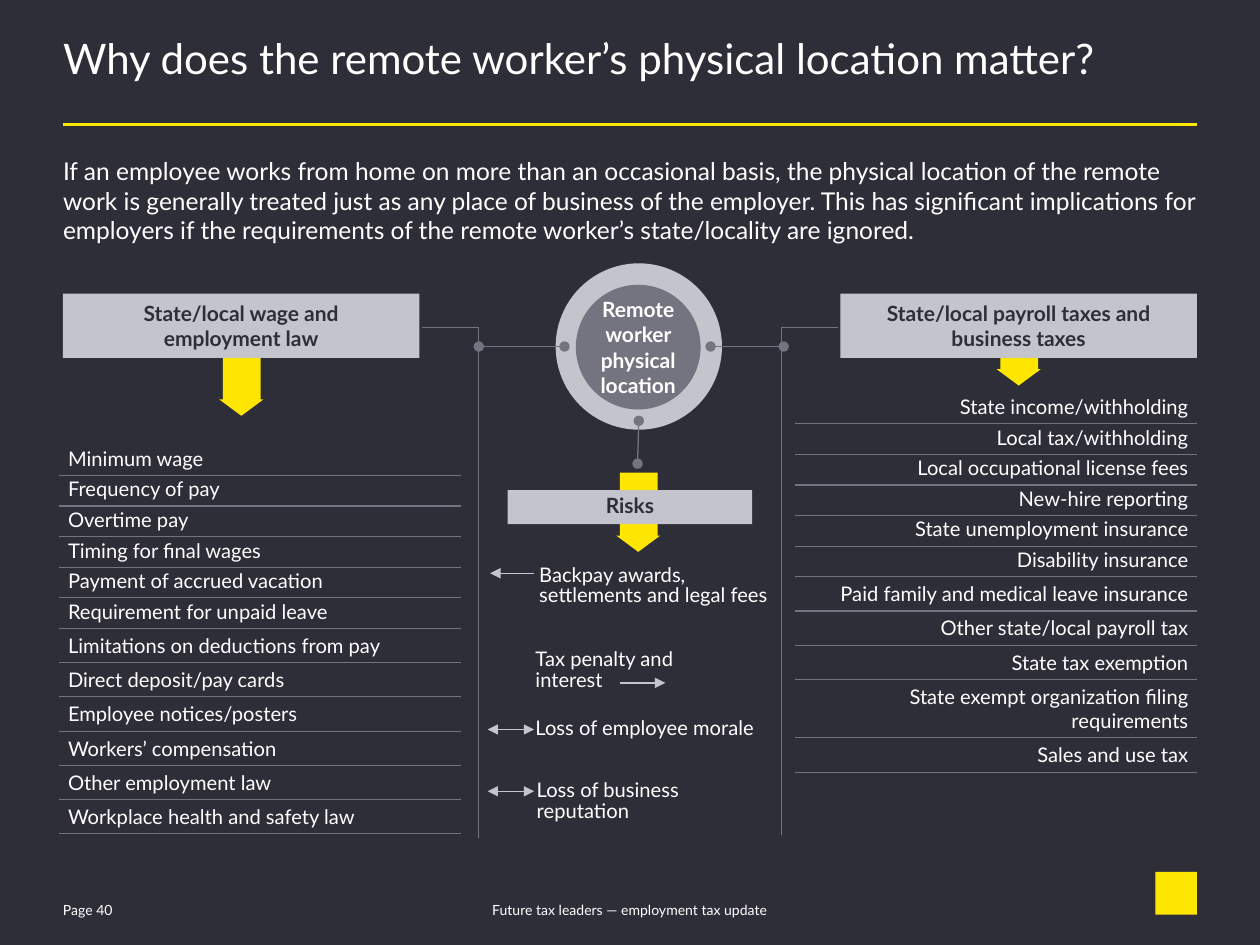
from lxml import etree
from pptx import Presentation
from pptx.dml.color import RGBColor
from pptx.enum.shapes import MSO_CONNECTOR, MSO_SHAPE
from pptx.enum.text import MSO_ANCHOR, MSO_AUTO_SIZE, PP_ALIGN
from pptx.oxml.ns import qn
from pptx.util import Inches, Pt

RECT, OVAL, TRIANGLE = MSO_SHAPE.RECTANGLE, MSO_SHAPE.OVAL, MSO_SHAPE.ISOSCELES_TRIANGLE
LEFT, CENTER, RIGHT = PP_ALIGN.LEFT, PP_ALIGN.CENTER, PP_ALIGN.RIGHT
TOP, MIDDLE = MSO_ANCHOR.TOP, MSO_ANCHOR.MIDDLE
DARK, WHITE, YELLOW, SILVER, GREY = "2E2E38", "FFFFFF", "FFE600", "C4C4CD", "747480"
rgb = RGBColor.from_string

prs = Presentation()
prs.slide_width, prs.slide_height = Inches(10), Inches(7.5)
UNIT = prs.slide_width / 100  # the slide is a grid of 100 columns by 75 rows


def grid(*cells):
    return [round(c * UNIT) for c in cells]


def write(tf, text, size=11.5, color=WHITE, bold=False, align=LEFT, anchor=TOP,
          spacing=1.0, margins=(0, 0, 0, 0)):
    tf.word_wrap = True
    tf.auto_size = MSO_AUTO_SIZE.NONE
    tf.vertical_anchor = anchor
    tf.margin_left, tf.margin_top, tf.margin_right, tf.margin_bottom = grid(*margins)
    p = tf.paragraphs[0]
    p.alignment, p.line_spacing = align, spacing
    p.space_before = p.space_after = Pt(0)
    r = p.add_run()
    r.text = text
    r.font.name, r.font.size, r.font.bold = "Lato", Pt(size), bold
    r.font.color.rgb = rgb(color)


s = prs.slides.add_slide(prs.slide_layouts[1])
s.background.fill.solid()
s.background.fill.fore_color.rgb = rgb(DARK)

# Title and introduction
title, body = s.placeholders
title.left, title.top, title.width, title.height = grid(5, 3.2, 90, 6.5)
write(title.text_frame, "Why does the remote worker’s physical location matter?",
      size=24, spacing=0.85)
body.left, body.top, body.width, body.height = grid(5, 12.4, 90, 7.1)
pPr = body.text_frame.paragraphs[0]._p.get_or_add_pPr()
pPr.set("marL", "0")
pPr.set("indent", "0")
etree.SubElement(pPr, qn("a:buNone"))
write(body.text_frame,
      "If an employee works from home on more than an occasional basis, the physical "
      "location of the remote work is generally treated just as any place of business "
      "of the employer. This has significant implications for employers if the "
      "requirements of the remote worker’s state/locality are ignored.", size=14)

# Yellow arrows, heading bars and hub; the last rectangle marks the corner
shapes = []
for x, y in [(17.7, 26.7), (79.4, 24.3), (49.2, 37.5)]:
    shapes += [(RECT, x, y, 3, 5.2, YELLOW, "", {}),
               (TRIANGLE, x - 0.3, y + 5, 3.5, 1.3, YELLOW, "", {})]
heading = dict(color=DARK, margins=(3, 0, 3, 0))
shapes += [
    (RECT, 5, 23.3, 28.3, 5.1, SILVER, "State/local wage and employment law", heading),
    (RECT, 66.7, 23.3, 28.3, 5.1, SILVER,
     "State/local payroll taxes and business taxes", heading),
    (RECT, 40.3, 38.9, 19.4, 2.7, SILVER, "Risks", dict(color=DARK, spacing=0.85)),
    (OVAL, 44.1, 20.9, 13.2, 13.2, SILVER, "", {}),
    (OVAL, 45.7, 22.6, 9.9, 9.9, GREY, "Remote worker physical location", {}),
    (RECT, 91.7, 69.2, 3.3, 3.4, YELLOW, "", {}),
]
for kind, x, y, w, h, color, text, look in shapes:
    sp = s.shapes.add_shape(kind, *grid(x, y, w, h))
    sp.shadow.inherit = False
    sp.fill.solid()
    sp.fill.fore_color.rgb = rgb(color)
    sp.line.fill.background()
    if kind == TRIANGLE:
        sp.rotation = 180
    if text:
        write(sp.text_frame, text, size=12, bold=True, align=CENTER, anchor=MIDDLE, **look)

# Rule, brackets, hub links and risk arrows: start, end, colour, width, end marks
for x1, y1, x2, y2, color, width, head, tail in [
    (5, 9.9, 95, 9.9, YELLOW, 1.5, None, None),
    (38, 26, 38, 66.5, GREY, 0.75, None, None),
    (38, 26, 33.5, 26, GREY, 0.75, None, None),
    (62, 26, 62, 66.3, GREY, 0.75, None, None),
    (66.5, 26, 62, 26, GREY, 0.75, None, None),
    (38, 27.5, 44.8, 27.5, GREY, 0.75, "oval", "oval"),
    (56.4, 27.5, 62.2, 27.5, GREY, 0.75, "oval", "oval"),
    (50.7, 33.4, 50.6, 36.8, GREY, 0.75, "oval", "oval"),
    (42.4, 45.5, 38.9, 45.5, SILVER, 0.75, None, "triangle"),
    (49.2, 54.2, 52.8, 54.2, SILVER, 0.75, None, "triangle"),
    (38.7, 57.9, 42.4, 57.9, SILVER, 0.75, "triangle", "triangle"),
    (38.7, 62.8, 42.4, 62.8, SILVER, 0.75, "triangle", "triangle"),
]:
    line = s.shapes.add_connector(MSO_CONNECTOR.STRAIGHT, *grid(x1, y1, x2, y2))
    line.line.color.rgb = rgb(color)
    line.line.width = Pt(width)
    for tag, mark in [("a:headEnd", head), ("a:tailEnd", tail)]:
        if mark:
            etree.SubElement(line.line._get_or_add_ln(), qn(tag), type=mark)
    etree.SubElement(line._element.spPr, qn("a:effectLst"))

# Risks and footer
risk = dict(spacing=0.85)
footer = dict(size=8, anchor=MIDDLE)
for x, y, w, h, text, look in [
    (42.8, 44.6, 19.4, 3.6, "Backpay awards, settlements and legal fees", risk),
    (42.5, 51.3, 15, 3.7, "Tax penalty and interest", risk),
    (42.5, 56.8, 19.4, 2, "Loss of employee morale", risk),
    (42.6, 61.7, 18, 3.7, "Loss of business reputation", risk),
    (5, 71.2, 7.3, 2, "Page 40", footer),
    (33.1, 71.2, 33.8, 2, "Future tax leaders — employment tax update",
     dict(footer, align=CENTER)),
]:
    tb = s.shapes.add_textbox(*grid(x, y, w, h))
    margins = (0, 0.3, 0, 0) if look is risk else (0, 0, 0, 0)
    write(tb.text_frame, text, margins=margins, **look)

# Lists of laws and taxes; the first six rows are tighter
TIGHT_ROWS = 6
laws = ["Minimum wage", "Frequency of pay", "Overtime pay", "Timing for final wages",
        "Payment of accrued vacation", "Requirement for unpaid leave",
        "Limitations on deductions from pay", "Direct deposit/pay cards",
        "Employee notices/posters", "Workers’ compensation", "Other employment law",
        "Workplace health and safety law"]
taxes = ["State income/withholding", "Local tax/withholding",
         "Local occupational license fees", "New-hire reporting",
         "State unemployment insurance", "Disability insurance",
         "Paid family and medical leave insurance", "Other state/local payroll tax",
         "State tax exemption", "State exempt organization filing requirements",
         "Sales and use tax"]
for x, y, h, items, align in [(4.7, 35.3, 30.3, laws, LEFT), (63.1, 31.2, 29.5, taxes, RIGHT)]:
    table = s.shapes.add_table(len(items), 1, *grid(x, y, 31.9, h)).table
    table.first_row = table.horz_banding = False
    style = table._tbl.tblPr.find(qn("a:tableStyleId"))
    style.text = "{2D5ABB26-0587-4C30-8999-92F81FD0307C}"  # no style, no grid
    for i, text in enumerate(items):
        tight = i < TIGHT_ROWS
        table.rows[i].height = grid(2.3 if tight else 2.6)[0]
        cell = table.cell(i, 0)
        write(cell.text_frame, text, align=align, spacing=0.85 if tight else 1.0)
        cell.margin_left, cell.margin_top, cell.margin_right, cell.margin_bottom = grid(
            0.7, 0.4, 0.7, 0.4)
        cell.fill.background()
        border = etree.Element(qn("a:lnB"), w=str(Pt(0.75)))
        fill = etree.SubElement(border, qn("a:solidFill"))
        etree.SubElement(fill, qn("a:srgbClr"), val=GREY)
        cell._tc.get_or_add_tcPr().insert(0, border)

prs.save("out.pptx")
